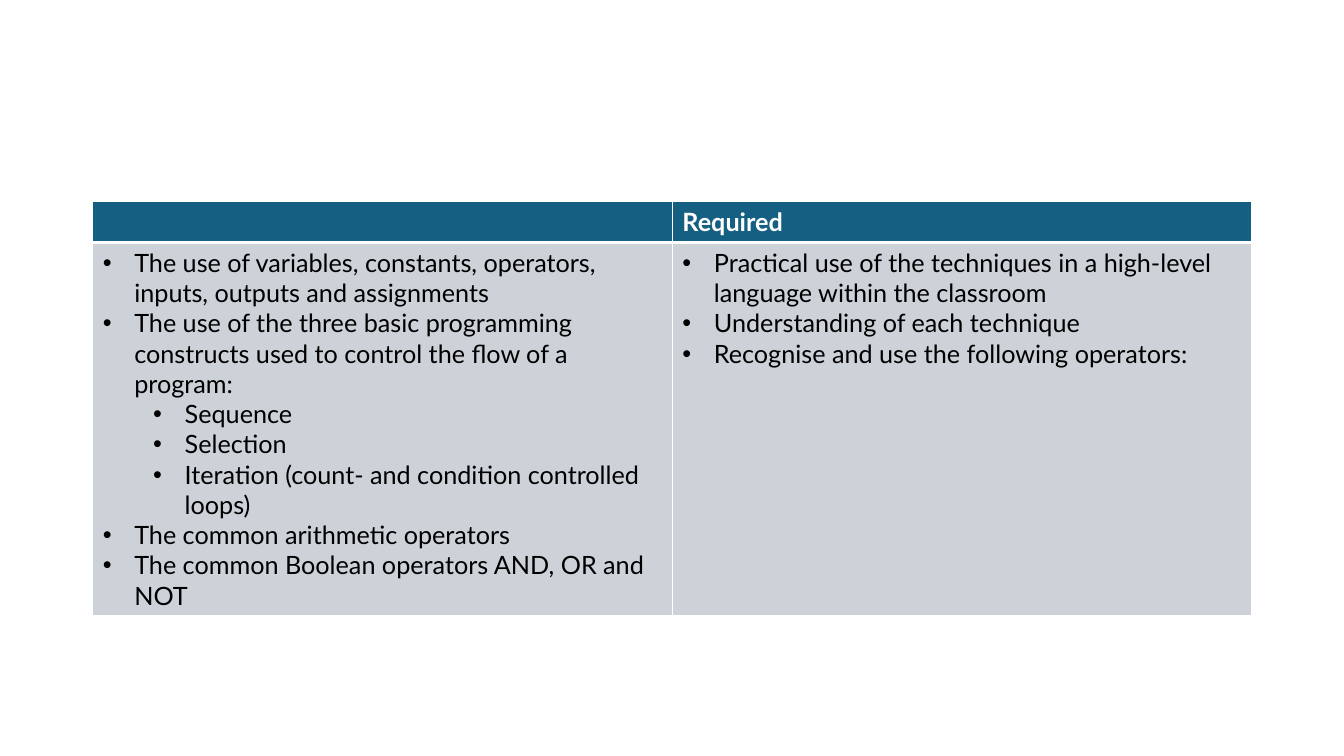
"""Build a slide with a table of programming techniques and what is required."""
from dataclasses import dataclass

from lxml.etree import SubElement
from pptx import Presentation
from pptx.dml.color import RGBColor
from pptx.oxml import parse_xml
from pptx.oxml.ns import nsdecls, qn
from pptx.table import _Cell as Cell
from pptx.util import Pt

COLORS = {"header": "156082", "body": "CCD2D8", "text": "000000", "white": "FFFFFF"}
FONT_NAME = "Lato"
FONT_SIZE = Pt(18)
COLUMN_WIDTH = Pt(414)
ROW_HEIGHTS = (Pt(29.2), Pt(266.4))
BULLET_HANG = Pt(22.5)
LEVEL_STEP = Pt(36)
THIN, THICK = Pt(1), Pt(3)


@dataclass(frozen=True)
class Line:
    """One paragraph of a table cell."""
    text: str
    level: int = 0
    bulleted: bool = True


@dataclass(frozen=True)
class RowStyle:
    """The look of one table row."""
    fill: str
    text: str
    bold: bool
    top: int
    bottom: int


ROW_STYLES = (
    RowStyle("header", "white", True, THIN, THICK),
    RowStyle("body", "text", False, THICK, THIN),
)

TECHNIQUES = (
    Line("The use of variables, constants, operators, inputs, outputs and assignments"),
    Line("The use of the three basic programming constructs used to control "
         "the flow of a program:"),
    Line("Sequence", 1),
    Line("Selection", 1),
    Line("Iteration (count- and condition controlled loops)", 1),
    Line("The common arithmetic operators"),
    Line("The common Boolean operators AND, OR and NOT"),
)
REQUIREMENTS = (
    Line("Practical use of the techniques in a high-level language within the classroom"),
    Line("Understanding of each technique"),
    Line("Recognise and use the following operators:"),
)
ROWS = (
    ((), (Line("Required", bulleted=False),)),
    (TECHNIQUES, REQUIREMENTS),
)


def set_borders(cell: Cell, style: RowStyle) -> None:
    """Give a cell white borders, ahead of its fill."""
    widths = {"lnL": THIN, "lnR": THIN, "lnT": style.top, "lnB": style.bottom}
    properties = cell._tc.get_or_add_tcPr()
    for position, (tag, width) in enumerate(widths.items()):
        properties.insert(position, parse_xml(
            f'<a:{tag} {nsdecls("a")} w="{int(width)}"><a:solidFill>'
            f'<a:srgbClr val="{COLORS["white"]}"/></a:solidFill></a:{tag}>'))


def fill_cell(cell: Cell, lines: tuple[Line, ...], style: RowStyle) -> None:
    """Fill, border and write one cell."""
    cell.fill.solid()
    cell.fill.fore_color.rgb = RGBColor.from_string(COLORS[style.fill])
    set_borders(cell, style)
    frame = cell.text_frame
    for index, line in enumerate(lines):
        paragraph = frame.add_paragraph() if index else frame.paragraphs[0]
        paragraph.text = line.text
        paragraph.level = line.level
        if line.bulleted:
            properties = paragraph._p.get_or_add_pPr()
            properties.set("marL", str(int(BULLET_HANG + line.level * LEVEL_STEP)))
            properties.set("indent", str(-int(BULLET_HANG)))
            SubElement(properties, qn("a:buFont"), typeface="Arial")
            SubElement(properties, qn("a:buChar"), char="•")
        font = paragraph.font
        font.name = FONT_NAME
        font.size = FONT_SIZE
        font.bold = style.bold
        font.color.rgb = RGBColor.from_string(COLORS[style.text])


def main() -> None:
    """Build and save the slide."""
    presentation = Presentation()
    presentation.slide_width, presentation.slide_height = Pt(960), Pt(540)
    slide = presentation.slides.add_slide(presentation.slide_layouts[6])
    techniques = slide.shapes.add_table(
        2, 2, Pt(66.24), Pt(144), 2 * COLUMN_WIDTH, sum(ROW_HEIGHTS)).table
    for column in techniques.columns:
        column.width = COLUMN_WIDTH
    for row, height, contents, style in zip(
            techniques.rows, ROW_HEIGHTS, ROWS, ROW_STYLES):
        row.height = height
        for cell, lines in zip(row.cells, contents):
            fill_cell(cell, lines, style)
    presentation.save("out.pptx")


if __name__ == "__main__":
    main()
